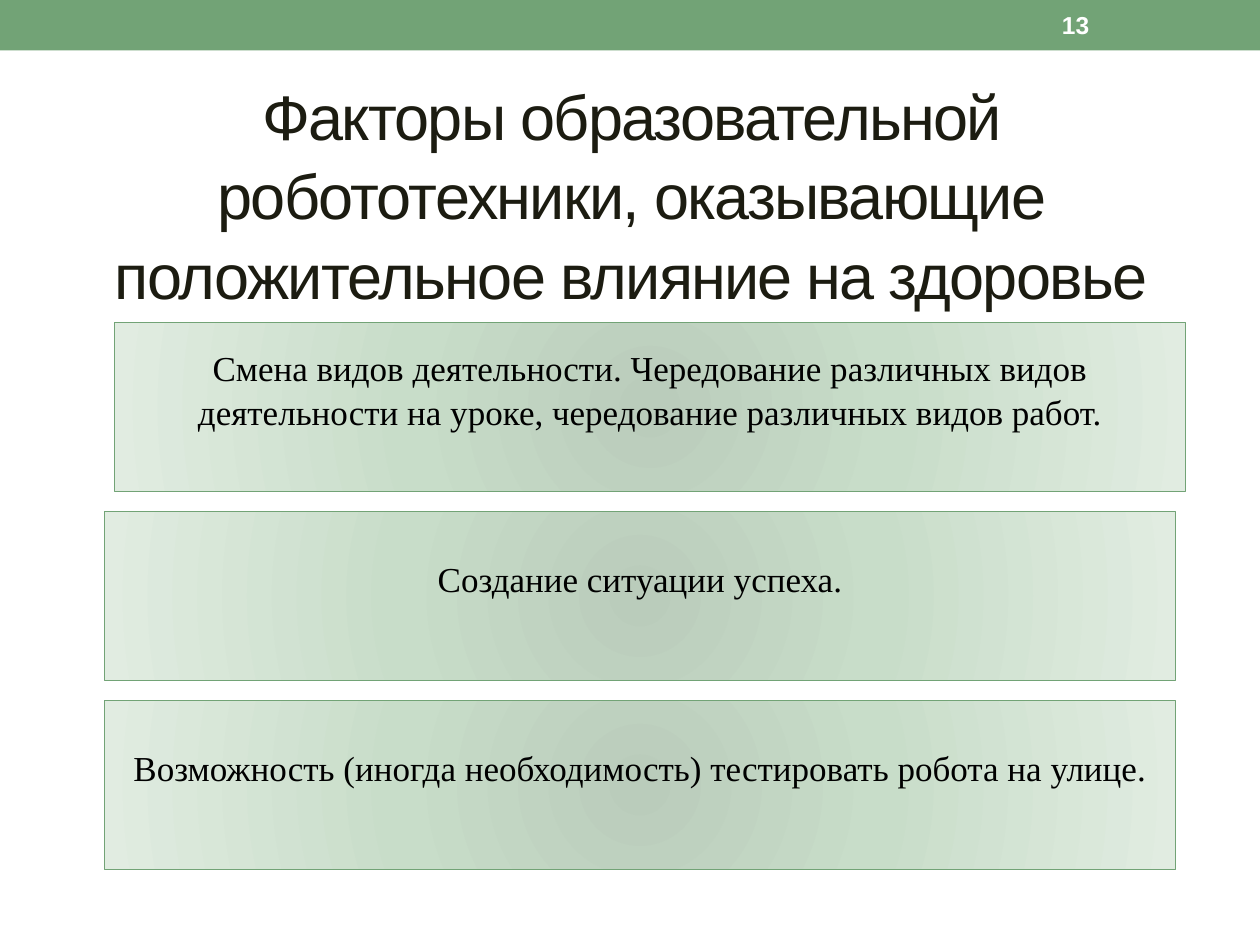
from lxml.etree import SubElement
from pptx import Presentation
from pptx.dml.color import RGBColor
from pptx.enum.shapes import MSO_SHAPE
from pptx.enum.text import MSO_ANCHOR, PP_ALIGN
from pptx.oxml.ns import qn
from pptx.util import Inches, Pt

COLORS = {
    "green": "72A376",
    "title": "1C1C11",
    "black": "000000",
    "white": "FFFFFF",
    "card_center": "BACCBB",
    "card_middle": "C8DDC9",
    "card_edge": "E1ECE1",
}
CARD_STOPS = [(0, "card_center"), (45, "card_middle"), (100, "card_edge")]


def write_text(shape, text, font="Arial", size=20, color="black", bold=False,
               align=PP_ALIGN.CENTER, line_spacing=1.05, tracking=0, bottom=0.05):
    """Fill a shape with one paragraph; tracking is in points, bottom in inches."""
    frame = shape.text_frame
    frame.word_wrap = True
    frame.vertical_anchor = MSO_ANCHOR.MIDDLE
    frame.margin_bottom = Inches(bottom)
    paragraph = frame.paragraphs[0]
    paragraph.alignment = align
    paragraph.line_spacing = line_spacing
    run = paragraph.add_run()
    run.text = text
    run.font.name = font
    run.font.size = Pt(size)
    run.font.bold = bold
    run.font.color.rgb = RGBColor.from_string(COLORS[color])
    if tracking:
        run.font._element.set("spc", str(tracking * 100))


def fill_radial(shape, stops):
    """Give a shape a circular gradient of (percent, color name) stops."""
    shape.fill.gradient()
    gradient = shape._element.spPr.find(qn("a:gradFill"))
    for child in list(gradient):
        gradient.remove(child)
    stop_list = SubElement(gradient, qn("a:gsLst"))
    for percent, color in stops:
        stop = SubElement(stop_list, qn("a:gs"), pos=str(percent * 1000))
        SubElement(stop, qn("a:srgbClr"), val=COLORS[color])
    circle = SubElement(gradient, qn("a:path"), path="circle")
    SubElement(circle, qn("a:fillToRect"), {side: "100000" for side in "ltrb"})


presentation = Presentation()
presentation.slide_width = Inches(10)
presentation.slide_height = Inches(7.5)
slide = presentation.slides.add_slide(presentation.slide_layouts[6])
shapes = slide.shapes

# Top band
band = shapes.add_shape(MSO_SHAPE.RECTANGLE, 0, 0, Inches(10), Inches(0.4))
band.shadow.inherit = False
band.fill.solid()
band.fill.fore_color.rgb = RGBColor.from_string(COLORS["green"])
band.line.fill.background()

# Title
title = shapes.add_textbox(Inches(0.51), Inches(0.99), Inches(9), Inches(1.08))
write_text(title, "Факторы образовательной робототехники, оказывающие "
           "положительное влияние на здоровье",
           size=36, color="title", tracking=-1)

# Factor cards
factors = [
    (0.91, "Смена видов деятельности. Чередование различных видов "
           "деятельности на уроке, чередование различных видов работ."),
    (0.83, "Создание ситуации успеха."),
    (0.83, "Возможность (иногда необходимость) тестировать робота на улице."),
]
for row, (left, factor) in enumerate(factors):
    card = shapes.add_shape(MSO_SHAPE.RECTANGLE, Inches(left),
                            Inches(2.56 + 1.5 * row), Inches(8.5), Inches(1.34))
    card.shadow.inherit = False
    fill_radial(card, CARD_STOPS)
    card.line.color.rgb = RGBColor.from_string(COLORS["green"])
    card.line.width = Pt(0.75)
    write_text(card, factor, font="Times New Roman", bottom=0.34)

# Slide number
number = shapes.add_textbox(Inches(8.33), Inches(0.02), Inches(1.17), Inches(0.36))
write_text(number, "13", size=14, color="white", bold=True,
           align=PP_ALIGN.LEFT, line_spacing=1)

presentation.save("out.pptx")
